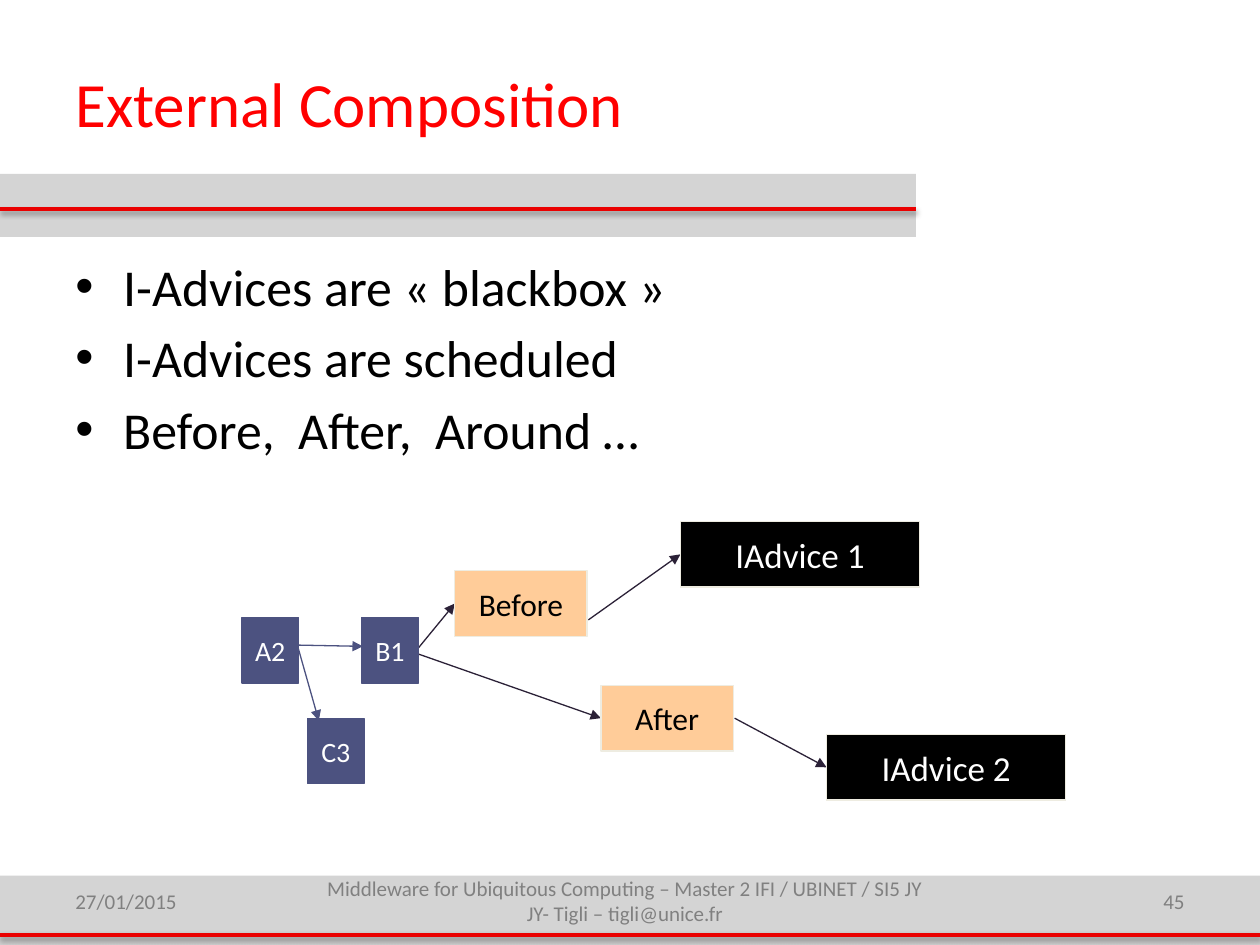
from lxml import etree
from pptx import Presentation
from pptx.dml.color import RGBColor
from pptx.enum.shapes import MSO_CONNECTOR, MSO_SHAPE
from pptx.enum.text import MSO_ANCHOR, PP_ALIGN
from pptx.oxml.ns import qn
from pptx.util import Inches, Pt

FONT = "Calibri"
WHITE = RGBColor(0xFF, 0xFF, 0xFF)
BLACK = RGBColor(0x00, 0x00, 0x00)
RED = RGBColor(0xFF, 0x00, 0x00)
RULE_RED = RGBColor(0xEA, 0x00, 0x00)
BAND_GREY = RGBColor(0xD4, 0xD4, 0xD4)
TEXT_GREY = RGBColor(0x80, 0x80, 0x80)
SLATE = RGBColor(0x4C, 0x52, 0x80)
PEACH = RGBColor(0xFF, 0xCC, 0x99)
CREAM = RGBColor(0xEE, 0xEC, 0xE1)
ARROW_INK = RGBColor(0x2B, 0x21, 0x37)


def inches(values):
    return [Inches(value) for value in values]


def add_bullet(para, indent=0.38):
    props = para._p.get_or_add_pPr()
    props.set("marL", str(Inches(indent)))
    props.set("indent", str(-Inches(indent)))
    etree.SubElement(props, qn("a:buFont"), typeface="Arial")
    etree.SubElement(props, qn("a:buChar"), char="•")


def write(shape, lines, size, color, align=PP_ALIGN.LEFT,
          anchor=MSO_ANCHOR.MIDDLE, wrap=True, bullets=False, gap=0):
    """Fill a shape with one paragraph for each line."""
    frame = shape.text_frame
    frame.word_wrap = wrap
    frame.vertical_anchor = anchor
    for number, line in enumerate(lines):
        para = frame.add_paragraph() if number else frame.paragraphs[0]
        if bullets:
            add_bullet(para)
        para.alignment = align
        para.space_before = Pt(gap if number else 0)
        span = para.add_run()
        span.text = line
        span.font.name = FONT
        span.font.size = Pt(size)
        span.font.color.rgb = color


def add_text(page, box, lines, **style):
    write(page.shapes.add_textbox(*inches(box)), lines, **style)


def add_block(page, box, fill, line=None):
    block = page.shapes.add_shape(MSO_SHAPE.RECTANGLE, *inches(box))
    block.shadow.inherit = False
    block.fill.solid()
    block.fill.fore_color.rgb = fill
    if line is None:
        block.line.fill.background()
    else:
        block.line.color.rgb = line
        block.line.width = Pt(0.75)
    return block


def add_line(page, start, end, color, width=0.75, arrow=False, shadow=False):
    line = page.shapes.add_connector(
        MSO_CONNECTOR.STRAIGHT, *inches(start + end))
    line.line.color.rgb = color
    line.line.width = Pt(width)
    if arrow:
        etree.SubElement(line.line._get_or_add_ln(), qn("a:tailEnd"),
                         type="triangle")
    effects = etree.SubElement(line._element.spPr, qn("a:effectLst"))
    if shadow:
        outer = etree.SubElement(effects, qn("a:outerShdw"), blurRad="40000",
                                 dist="20000", dir="5400000", rotWithShape="0")
        tint = etree.SubElement(outer, qn("a:srgbClr"), val=str(BLACK))
        etree.SubElement(tint, qn("a:alpha"), val="38000")


def add_band(page, box, rule_offset):
    """Grey band crossed by a red rule."""
    left, top, width, _ = box
    add_block(page, box, BAND_GREY)
    rule = top + rule_offset
    add_line(page, (left + width, rule), (left, rule), RULE_RED,
             width=2, shadow=True)


def add_footer(page, box):
    left, top, width, height = box
    add_band(page, box, 0.47)
    margin, side, middle, text_height = 0.5, 1.14, 5.08, 0.4
    parts = [
        (left + margin, side, "27/01/2015", PP_ALIGN.LEFT),
        (left + 2.42, middle, "Middleware for Ubiquitous Computing – Master 2 "
         "IFI / UBINET / SI5 JY JY- Tigli – tigli@unice.fr", PP_ALIGN.CENTER),
        (left + width - margin - side, side, "45", PP_ALIGN.RIGHT),
    ]
    for x, part_width, text, align in parts:
        add_text(page, (x, top, part_width, text_height), [text],
                 size=12, color=TEXT_GREY, align=align)


def add_diagram(page, box):
    """Components on the left, joined to the advices on the right."""
    left, top = box[:2]
    component, operator, advice = (0.45, 0.52), (1.05, 0.52), (1.9, 0.52)

    # Arrows: start and end relative to the diagram
    arrows = [
        ((0.44, 0.98), (0.96, 0.99), SLATE),
        ((0.44, 0.98), (0.61, 1.58), SLATE),
        ((1.37, 1.04), (1.69, 0.65), ARROW_INK),
        ((1.37, 1.04), (2.85, 1.56), ARROW_INK),
        ((2.75, 0.78), (3.48, 0.26), ARROW_INK),
        ((3.91, 1.56), (4.64, 1.95), ARROW_INK),
    ]
    for start, end, color in arrows:
        add_line(page, (left + start[0], top + start[1]),
                 (left + end[0], top + end[1]), color, arrow=True)

    # Boxes: format of each kind, then its members
    kinds = [
        (component, SLATE, SLATE, WHITE, 16,
         [("A2", 0, 0.76), ("B1", 0.95, 0.76), ("C3", 0.52, 1.56)]),
        (operator, PEACH, CREAM, BLACK, 18,
         [("Before", 1.69, 0.39), ("After", 2.85, 1.3)]),
        (advice, BLACK, CREAM, WHITE, 20,
         [("IAdvice 1", 3.48, 0), ("IAdvice 2", 4.64, 1.69)]),
    ]
    for extent, fill, line, color, size, members in kinds:
        for label, x, y in members:
            block = add_block(page, (left + x, top + y) + extent, fill, line)
            write(block, [label], size=size, color=color,
                  align=PP_ALIGN.CENTER, wrap=False)


def main():
    deck = Presentation()
    deck.slide_width, deck.slide_height = Inches(10), Inches(7.5)
    page = deck.slides.add_slide(deck.slide_layouts[6])

    # Frame of the page
    add_footer(page, (0, 6.95, 10, 0.55))
    add_band(page, (0, 1.38, 7.27, 0.5), 0.28)

    # Title and bullets
    add_text(page, (0.5, 0.3, 6.69, 1.03), ["External Composition"],
             size=36, color=RED)
    add_text(page, (0.5, 1.97, 9, 1.72),
             ["I-Advices are « blackbox »", "I-Advices are scheduled",
              "Before,  After,  Around …"],
             size=29.6, color=BLACK, anchor=MSO_ANCHOR.TOP,
             bullets=True, gap=5.3)

    add_diagram(page, (1.92, 4.14, 6.54, 2.21))
    deck.save("out.pptx")


if __name__ == "__main__":
    main()
